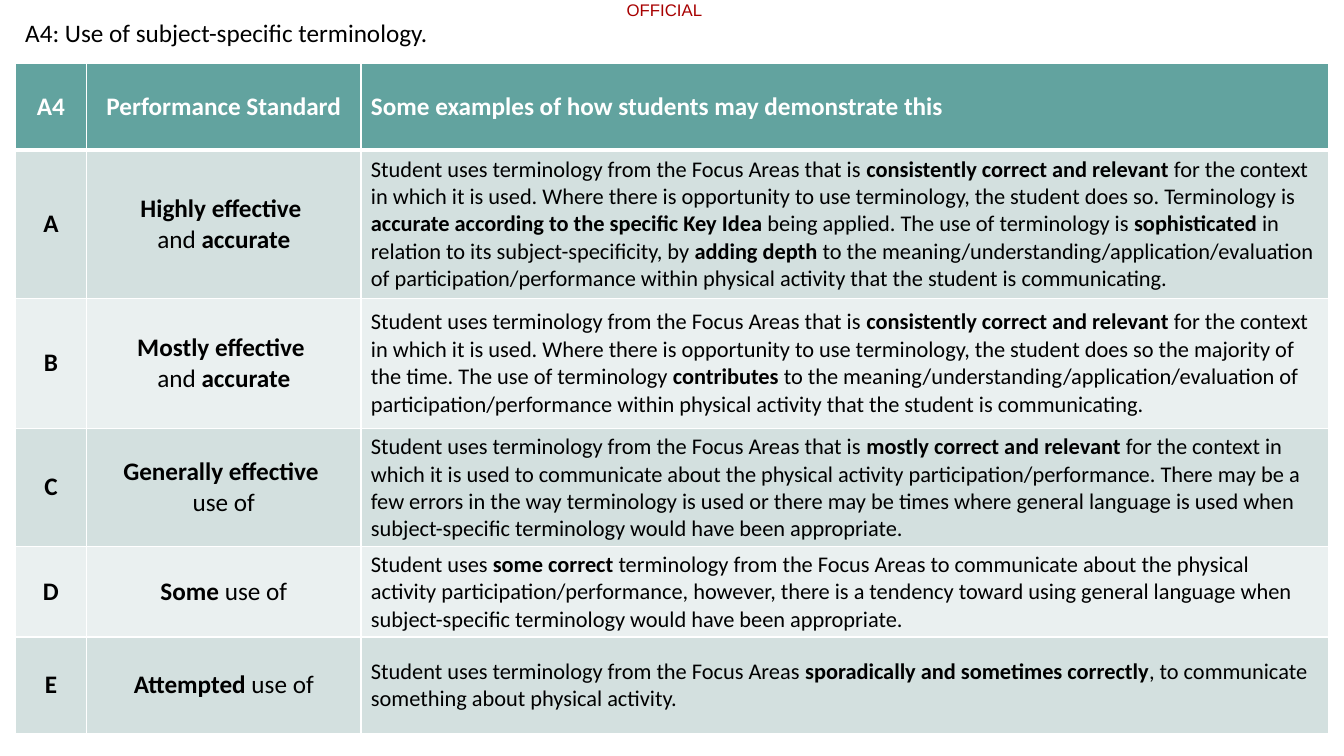
from lxml import etree
from pptx import Presentation
from pptx.dml.color import RGBColor
from pptx.enum import text
from pptx.oxml import ns
from pptx.util import Inches, Pt

HEADERS = ["A4", "Performance Standard", "Some examples of how students may demonstrate this"]

# Asterisks enclose bold text; \v is a line break and \n starts a paragraph.
STANDARDS = [
    ("A", "*Highly effective *\vand *accurate*",
     "Student uses terminology from the Focus Areas that is *consistently correct and relevant *"
     "for the context in which it is used. Where there is opportunity to use terminology, the "
     "student does so. Terminology is *accurate according to the specific Key Idea *being applied. "
     "The use of terminology is *sophisticated* in relation to its subject-specificity, by "
     "*adding depth* to the meaning/understanding/application/evaluation of "
     "participation/performance within physical activity that the student is communicating."),
    ("B", "*Mostly effective *\vand *accurate*",
     "Student uses terminology from the Focus Areas that is *consistently correct and relevant *"
     "for the context in which it is used. Where there is opportunity to use terminology, the "
     "student does so the majority of the time. The use of terminology *contributes* to the "
     "meaning/understanding/application/evaluation of participation/performance within physical "
     "activity that the student is communicating."),
    ("C", "*Generally effective *\nuse of",
     "Student uses terminology from the Focus Areas that is *mostly correct and relevant *for the "
     "context in which it is used to communicate about the physical activity "
     "participation/performance. There may be a few errors in the way terminology is used or there "
     "may be times where general language is used when subject-specific terminology would have "
     "been appropriate."),
    ("D", "*Some* use of",
     "Student uses *some correct *terminology from the Focus Areas to communicate about the "
     "physical activity participation/performance, however, there is a tendency toward using "
     "general language when subject-specific terminology would have been appropriate."),
    ("E", "*Attempted* use of",
     "Student uses terminology from the Focus Areas *sporadically and sometimes correctly*, to "
     "communicate something about physical activity."),
]
COLUMN_WIDTHS = [0.71, 2.72, 9.6]
ROW_HEIGHTS = [0.86, 1.47, 1.29, 1.17, 0.9, 0.96]


def color(value):
    return RGBColor.from_string(value)


class RubricSlide:
    FONT = "Calibri"
    BLACK, WHITE, RED = "000000", "FFFFFF", "A80000"
    HEADER, BANDS = "62A39F", ["D3E0DF", "EAF0F0"]
    LEFT, WIDTH = Inches(0.15), Inches(13.04)

    def __init__(self, presentation):
        self.slide = presentation.slides.add_slide(presentation.slide_layouts[5])

    def style(self, paragraph, size, ink, align, name=FONT):
        paragraph.alignment = align
        font = paragraph.font
        font.name, font.size, font.color.rgb = name, Pt(size), color(ink)

    def title(self, words):
        shape = self.slide.shapes.title
        shape.left, shape.top, shape.width, shape.height = (
            self.LEFT, Inches(0.12), self.WIDTH, Inches(0.4))
        frame = shape.text_frame
        frame.text = words
        frame.vertical_anchor = text.MSO_ANCHOR.TOP
        frame.auto_size = text.MSO_AUTO_SIZE.SHAPE_TO_FIT_TEXT
        paragraph = frame.paragraphs[0]
        self.style(paragraph, 18, self.BLACK, text.PP_ALIGN.LEFT)
        paragraph.line_spacing, paragraph.space_after = 1.0, Pt(6)

    def marking(self, words):
        shape = self.slide.shapes.add_textbox(Inches(6.19), 0, Inches(0.8), Inches(0.2))
        frame = shape.text_frame
        frame.margin_left = frame.margin_top = frame.margin_right = frame.margin_bottom = 0
        frame.word_wrap = True
        frame.text = words
        self.style(frame.paragraphs[0], 12, self.RED, text.PP_ALIGN.CENTER, "Arial")

    def table(self, left, top, widths, heights, rows):
        frame = self.slide.shapes.add_table(
            len(rows), len(widths), left, top, self.WIDTH, Inches(sum(heights)))
        table = frame.table
        for column, width in zip(table.columns, widths):
            column.width = Inches(width)
        for row, height in zip(table.rows, heights):
            row.height = Inches(height)
        for i, values in enumerate(rows):
            for j, value in enumerate(values):
                self.cell(table.cell(i, j), value, i, j)

    def cell(self, cell, value, row, column):
        is_header, is_example = row == 0, column == 2
        cell.vertical_anchor = text.MSO_ANCHOR.MIDDLE
        cell.fill.solid()
        cell.fill.fore_color.rgb = color(self.HEADER if is_header else self.BANDS[(row - 1) % 2])
        self.borders(cell, top=3 if row == 1 else 1, bottom=3 if is_header else 1)
        size = 16 if is_example and not is_header else 18
        ink = self.WHITE if is_header else self.BLACK
        align = text.PP_ALIGN.LEFT if is_example else text.PP_ALIGN.CENTER
        for i, line in enumerate(value.split("\n")):
            frame = cell.text_frame
            paragraph = frame.add_paragraph() if i else frame.paragraphs[0]
            self.style(paragraph, size, ink, align)
            self.marked_runs(paragraph, line)

    def marked_runs(self, paragraph, line):
        """Add runs, bold between asterisks, with line breaks at vertical tabs."""
        for i, part in enumerate(line.split("*")):
            for j, words in enumerate(part.split("\v")):
                if j:
                    paragraph.add_line_break()
                if words:
                    run = paragraph.add_run()
                    run.text, run.font.bold = words, i % 2 == 1

    def borders(self, cell, top, bottom):
        properties = cell._tc.get_or_add_tcPr()
        for i, (side, points) in enumerate(zip("LRTB", (1, 1, top, bottom))):
            line = etree.Element(ns.qn("a:ln" + side), w=str(Pt(points)))
            fill = etree.SubElement(line, ns.qn("a:solidFill"))
            etree.SubElement(fill, ns.qn("a:srgbClr"), val=self.WHITE)
            properties.insert(i, line)


def main():
    presentation = Presentation()
    presentation.slide_width, presentation.slide_height = Inches(13.33), Inches(7.5)
    rubric = RubricSlide(presentation)
    rubric.marking("OFFICIAL")
    bold_headers = [f"*{header}*" for header in HEADERS]
    rows = [bold_headers] + [(f"*{grade}*", *rest) for grade, *rest in STANDARDS]
    rubric.table(rubric.LEFT, Inches(0.63), COLUMN_WIDTHS, ROW_HEIGHTS, rows)
    rubric.title("A4: Use of subject-specific terminology.")
    presentation.save("out.pptx")


if __name__ == "__main__":
    main()
